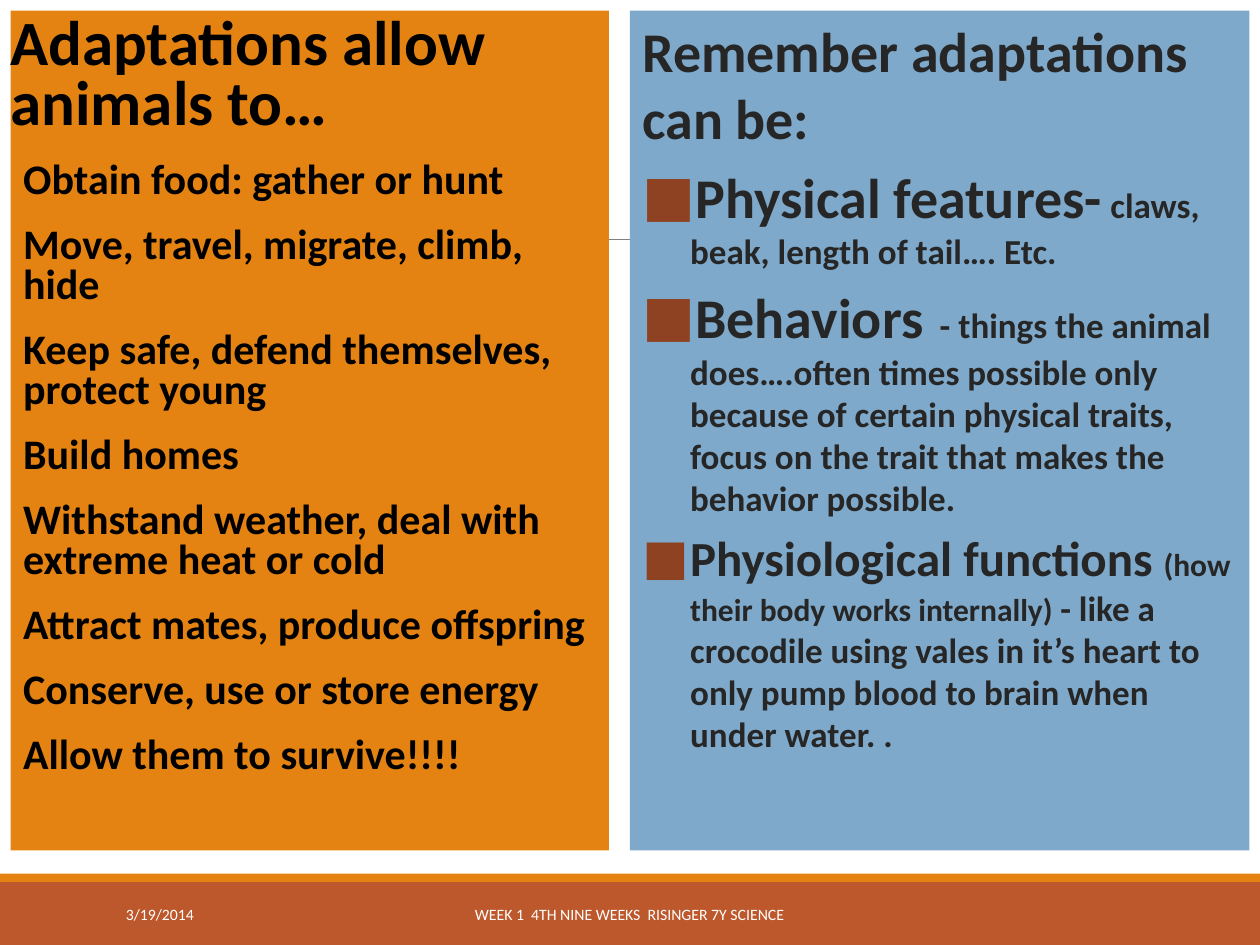
from dataclasses import dataclass

import pptx
import pptx.dml.color
import pptx.enum.shapes
import pptx.enum.text
import pptx.oxml
import pptx.oxml.ns
import pptx.util
from lxml import etree

Align = pptx.enum.text.PP_ALIGN
Anchor = pptx.enum.text.MSO_ANCHOR
qn = pptx.oxml.ns.qn
Pt = pptx.util.Pt


@dataclass(frozen=True)
class Theme:
    font: str = "Calibri"
    orange: str = "E48312"
    rust: str = "BD582C"
    blue: str = "7EA9CA"
    gray: str = "808080"
    black: str = "000000"
    dark: str = "262626"
    white: str = "FFFFFF"
    mark: str = "8E4221"
    faint: str = "5E2C16"
    head: int = 36
    list: int = 24
    big: int = 32
    mid: int = 28
    note: int = 20
    small: int = 18
    foot: int = 9


@dataclass(frozen=True)
class Box:
    """A place on the grid, in columns and rows."""
    col: float
    row: float
    wide: float
    high: float


@dataclass(frozen=True)
class Run:
    text: str
    size: int


@dataclass(frozen=True)
class Style:
    color: str
    bold: bool = True
    align: Align = Align.LEFT
    tight: bool = False


@dataclass(frozen=True)
class Mark:
    char: str
    color: str
    hang: float


THEME = Theme()
COLS, ROWS = 120, 90

# Left list
GOALS = (
    "Obtain food: gather or hunt",
    "Move, travel, migrate, climb, hide",
    "Keep safe, defend themselves, protect young",
    "Build homes",
    "Withstand weather, deal with extreme heat or cold",
    "Attract mates, produce offspring",
    "Conserve, use or store energy",
    "Allow them to survive!!!!",
)

# Right list: a large term, then smaller notes
KINDS = (
    (Run("Physical features-", THEME.big),
     Run(" claws, beak, length of tail…. Etc.", THEME.note)),
    (Run("Behaviors", THEME.big),
     Run("  - things the animal does….often times possible only because of "
         "certain physical traits, focus on the trait that makes the "
         "behavior possible.", THEME.note)),
    (Run("Physiological functions ", THEME.mid),
     Run("(how their body works internally) ", THEME.small),
     Run("- like a crocodile using vales in it’s heart to only pump blood "
         "to brain when under water. .", THEME.note)),
)

deck = pptx.Presentation()
deck.slide_width = pptx.util.Inches(10)
deck.slide_height = pptx.util.Inches(7.5)
slide = deck.slides.add_slide(deck.slide_layouts[1])


def across(cols: float) -> int:
    return round(deck.slide_width * cols / COLS)


def down(rows: float) -> int:
    return round(deck.slide_height * rows / ROWS)


def place(box: Box) -> tuple:
    return across(box.col), down(box.row), across(box.wide), down(box.high)


def tint(name: str) -> pptx.dml.color.RGBColor:
    return pptx.dml.color.RGBColor.from_string(name)


def paint(shape, color: str) -> None:
    shape.fill.solid()
    shape.fill.fore_color.rgb = tint(color)


def block(box: Box, color: str):
    kind = pptx.enum.shapes.MSO_SHAPE.RECTANGLE
    shape = slide.shapes.add_shape(kind, *place(box))
    shape.shadow.inherit = False
    shape.line.fill.background()
    paint(shape, color)
    return shape


def rule(col: float, end: float, row: float) -> None:
    kind = pptx.enum.shapes.MSO_CONNECTOR.STRAIGHT
    line = slide.shapes.add_connector(
        kind, across(col), down(row), across(end), down(row))
    line.line.color.rgb = tint(THEME.gray)
    line.line.width = Pt(0.5)
    etree.SubElement(line.element.spPr, qn("a:effectLst"))


def space(para, tight: bool) -> None:
    if tight:
        para.line_spacing = 0.8
        para.space_before, para.space_after = Pt(12), Pt(2)
    else:
        before = etree.SubElement(para._p.get_or_add_pPr(), qn("a:spcBef"))
        etree.SubElement(before, qn("a:spcPct"), val="20000")


def bullet(para, mark: Mark | None) -> None:
    props = para._p.get_or_add_pPr()
    hang = pptx.util.Inches(mark.hang) if mark else 0
    props.set("marL", str(hang))
    props.set("indent", str(-hang))
    if mark is None:
        etree.SubElement(props, qn("a:buNone"))
        return
    color = etree.SubElement(props, qn("a:buClr"))
    etree.SubElement(color, qn("a:srgbClr"), val=mark.color)
    etree.SubElement(props, qn("a:buFont"), typeface=THEME.font)
    etree.SubElement(props, qn("a:buChar"), char=mark.char)


def write(frame, runs: tuple, style: Style, mark: Mark | None = None,
          first: bool = False) -> None:
    para = frame.paragraphs[0] if first else frame.add_paragraph()
    para.alignment = style.align
    space(para, style.tight)
    bullet(para, mark)
    for item in runs:
        run = para.add_run()
        run.text = item.text
        run.font.name = THEME.font
        run.font.size = Pt(item.size)
        run.font.bold = style.bold
        run.font.color.rgb = tint(style.color)


def setup(frame, anchor: Anchor) -> None:
    frame.word_wrap = True
    frame.auto_size = pptx.enum.text.MSO_AUTO_SIZE.NONE
    frame.vertical_anchor = anchor


def label(box: Box, text: str, align: Align) -> None:
    frame = slide.shapes.add_textbox(*place(box)).text_frame
    setup(frame, Anchor.MIDDLE)
    style = Style(THEME.white, bold=False, align=align)
    write(frame, (Run(text, THEME.foot),), style, first=True)


# Footer bands and the rule behind the panels
block(Box(0, 84, COLS, 6), THEME.rust)
block(Box(0, 83.2, COLS, 0.8), THEME.orange)
rule(11.8, 109.8, 22.8)

# Left panel: the body placeholder, brought in front of the rule
title = slide.shapes.title.element
title.getparent().remove(title)
body = slide.placeholders[1]
slide.shapes.element.append(body.element)
body.left, body.top, body.width, body.height = place(Box(1, 1, 57, 80))
paint(body, THEME.orange)
left = body.text_frame
setup(left, Anchor.TOP)
left.margin_left = left.margin_right = 0
bold = Style(THEME.black, tight=True)
write(left, (Run("Adaptations allow animals to…", THEME.head),), bold,
      first=True)
for goal in GOALS:
    write(left, (Run(goal, THEME.list),), bold, Mark(" ", THEME.faint, 0.1))

# Footer text
label(Box(10.8, 84.7, 24.4, 4.8), "3/19/2014", Align.LEFT)
label(Box(36.2, 84.7, 47.5, 4.8),
      "WEEK 1  4TH NINE WEEKS  RISINGER 7Y SCIENCE", Align.CENTER)

# Right panel
right = block(Box(60, 1, 59, 80), THEME.blue).text_frame
setup(right, Anchor.TOP)
plain = Style(THEME.dark)
write(right, (Run("Remember adaptations can be:", THEME.big),), plain,
      first=True)
for kind in KINDS:
    write(right, kind, plain, Mark("■", THEME.mark, 0.38))

deck.save("out.pptx")
